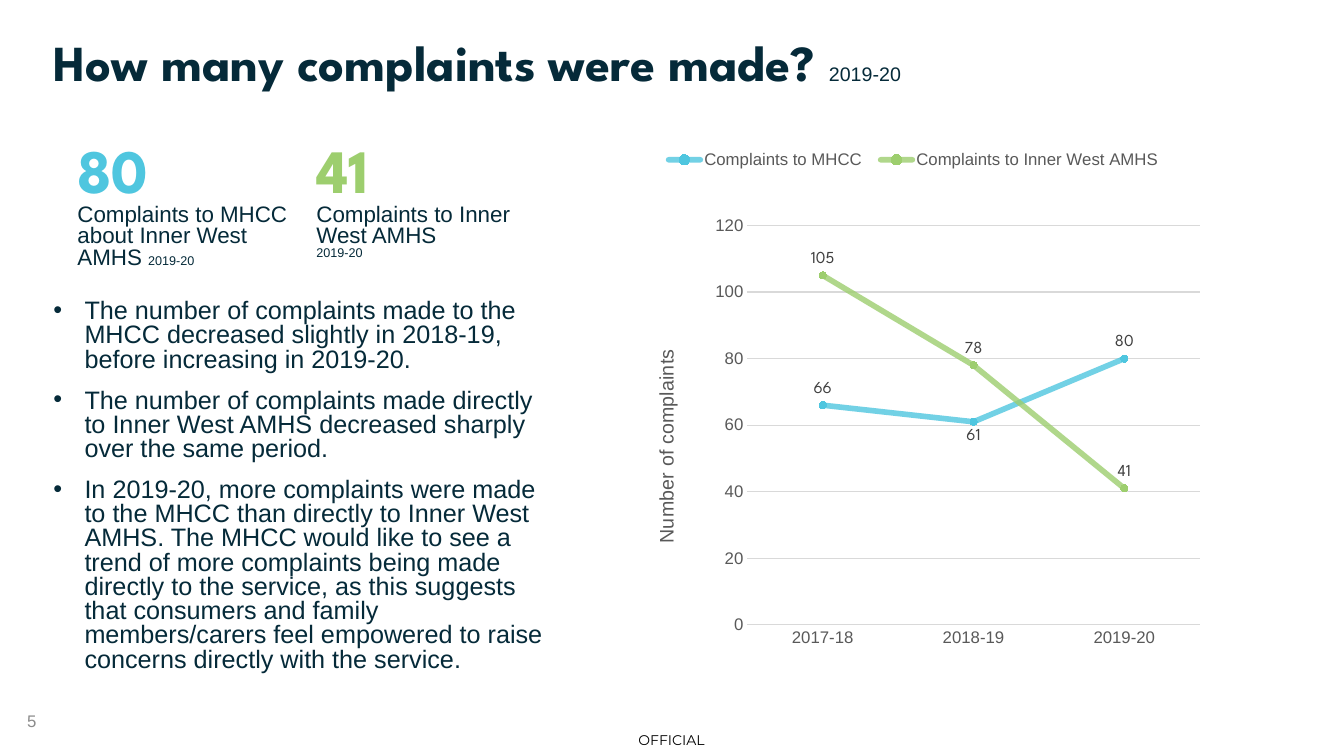
import pptx
import pptx.util
import pptx.dml.color
import pptx.chart.data
import pptx.enum.chart
import pptx.enum.text
import pptx.oxml
import pptx.oxml.ns
import lxml.etree

Inches = pptx.util.Inches
Pt = pptx.util.Pt
Align = pptx.enum.text.PP_ALIGN
Anchor = pptx.enum.text.MSO_ANCHOR
qn = pptx.oxml.ns.qn

NAVY, BLUE, GREEN = "052A39", "4FC6DF", "9DCE6E"
GREY, RULE = "595959", "D9D9D9"
HEAD, BODY = "League Spartan", "Arial"


def color(text):
    return pptx.dml.color.RGBColor.from_string(text)


def style(font, size=12, face=BODY, ink=NAVY, bold=False):
    font.size = Pt(size)
    font.name = face
    font.bold = bold
    font.color.rgb = color(ink)


def write(para, text, **form):
    for i, part in enumerate(text.split("\n")):
        if i:
            para.add_line_break()
        if part:
            run = para.add_run()
            run.text = part
            style(run.font, **form)


def place(part, mode=None, **spots):
    layout = part.find(qn("c:layout"))
    if layout is None:
        layout = lxml.etree.Element(qn("c:layout"))
        over = part.find(qn("c:overlay"))
        part.insert(0 if over is None else part.index(over), layout)
    for old in list(layout):
        layout.remove(old)
    manual = lxml.etree.SubElement(layout, qn("c:manualLayout"))
    if mode:
        lxml.etree.SubElement(manual, qn("c:layoutTarget")).set("val", mode)
    for key in ("x", "y"):
        lxml.etree.SubElement(manual, qn(f"c:{key}Mode")).set("val", "edge")
    for key, val in spots.items():
        lxml.etree.SubElement(manual, qn(f"c:{key}")).set("val", str(val))


class Deck:
    def __init__(self):
        self.prs = pptx.Presentation()
        self.prs.slide_width = Inches(13.33)
        self.prs.slide_height = Inches(7.5)
        self.slide = self.prs.slides.add_slide(self.prs.slide_layouts[5])

    def title(self, text, year):
        shape = self.slide.shapes.title
        shape.left, shape.top = Inches(0.43), Inches(0.33)
        shape.width, shape.height = Inches(12.42), Inches(0.93)
        frame = shape.text_frame
        frame.vertical_anchor = Anchor.TOP
        frame.auto_size = pptx.enum.text.MSO_AUTO_SIZE.NONE
        para = frame.paragraphs[0]
        para.alignment = Align.LEFT
        para.line_spacing = 0.9
        write(para, text, size=36, face=HEAD, bold=True)
        write(para, year, size=14)

    def box(self, left, top, width, height, anchor=Anchor.TOP):
        shape = self.slide.shapes.add_textbox(
            Inches(left), Inches(top), Inches(width), Inches(height))
        frame = shape.text_frame
        frame.word_wrap = True
        frame.vertical_anchor = anchor
        return frame

    def figure(self, left, value, label, ink):
        frame = self.box(left, 1.4, 2.37, 1.24)
        big, small = frame.paragraphs[0], frame.add_paragraph()
        big.line_spacing = small.line_spacing = 0.8
        write(big, value, size=44, face=HEAD, ink=ink, bold=True)
        write(small, label, size=16)
        write(small, "2019-20", size=9)

    def bullets(self, items):
        frame = self.box(0.43, 2.93, 5.22, 4.01)
        for i, item in enumerate(items):
            para = frame.add_paragraph() if i else frame.paragraphs[0]
            props = para._p.get_or_add_pPr()
            props.set("marL", str(Inches(0.31)))
            props.set("indent", str(-Inches(0.31)))
            lxml.etree.SubElement(props, qn("a:buFont")).set("typeface", BODY)
            lxml.etree.SubElement(props, qn("a:buChar")).set("char", "•")
            para.line_spacing = 0.8
            para.space_before = Pt(6 if i else 0)
            para.space_after = Pt(6)
            write(para, item, size=18)

    def footer(self, number, mark):
        frame = self.box(0.17, 6.95, 3, 0.4, Anchor.MIDDLE)
        write(frame.paragraphs[0], number, ink="8C8C8C")
        frame = self.box(6.15, 7.19, 1.02, 0.31, Anchor.MIDDLE)
        frame.margin_left = frame.margin_right = 0
        frame.margin_top = frame.margin_bottom = 0
        frame.paragraphs[0].alignment = Align.CENTER
        write(frame.paragraphs[0], mark, size=10, face="Montserrat",
              ink="000000")

    def chart(self, years, rows):
        data = pptx.chart.data.CategoryChartData()
        data.categories = years
        for name, vals, ink in rows:
            data.add_series(name, vals)
        chart = self.slide.shapes.add_chart(
            pptx.enum.chart.XL_CHART_TYPE.LINE_MARKERS, Inches(6.39),
            Inches(1.26), Inches(5.68), Inches(5.43), data).chart
        style(chart.font, size=10, ink="000000")
        chart.has_title = False
        chart.plots[0].vary_by_categories = False
        self.legend(chart)
        self.axes(chart)
        for line, row in zip(chart.plots[0].series, rows):
            self.series(line, row[2])
        low = chart.plots[0].series[0].points[1].data_label
        style(low.font, face=HEAD, ink="404040")
        low.position = pptx.enum.chart.XL_LABEL_POSITION.BELOW
        area = chart._chartSpace.chart.plotArea
        place(area, "inner", x=0.18, y=0.18, w=0.79, h=0.73)

    def legend(self, chart):
        chart.has_legend = True
        key = chart.legend
        key.position = pptx.enum.chart.XL_LEGEND_POSITION.BOTTOM
        key.include_in_layout = False
        style(key.font, ink=GREY)
        place(key._element, x=0.02, y=0.03, w=0.9, h=0.06)

    def axes(self, chart):
        cat, val = chart.category_axis, chart.value_axis
        for axis in (cat, val):
            axis.major_tick_mark = pptx.enum.chart.XL_TICK_MARK.NONE
            axis.minor_tick_mark = pptx.enum.chart.XL_TICK_MARK.NONE
            style(axis.tick_labels.font, ink=GREY)
        val.minimum_scale, val.maximum_scale, val.major_unit = 0, 120, 20
        val.format.line.fill.background()
        for line in (cat.format.line, val.major_gridlines.format.line):
            line.color.rgb = color(RULE)
            line.width = Pt(0.75)
        name = val.axis_title
        write(name.text_frame.paragraphs[0], "Number of complaints",
              size=14, ink=GREY)
        body = name.text_frame._txBody.find(qn("a:bodyPr"))
        body.set("rot", "-5400000")
        body.set("vert", "horz")
        place(name._element, x=0.01, y=0.4)

    def series(self, line, ink):
        line.smooth = False
        line.format.line.width = Pt(4)
        line.format.line.color.rgb = color(ink)
        stroke = line._element.find(qn("c:spPr")).find(qn("a:ln"))
        stroke.set("cap", "rnd")
        tone = stroke.find(".//" + qn("a:srgbClr"))
        lxml.etree.SubElement(tone, qn("a:alpha")).set("val", "80000")
        dot = line.marker
        dot.style = pptx.enum.chart.XL_MARKER_STYLE.CIRCLE
        dot.size = 5
        dot.format.fill.solid()
        dot.format.fill.fore_color.rgb = color(ink)
        dot.format.line.color.rgb = color(ink)
        tags = line.data_labels
        tags.show_value = True
        tags.position = pptx.enum.chart.XL_LABEL_POSITION.ABOVE
        style(tags.font, face=HEAD, ink="404040")


def main():
    deck = Deck()
    deck.title("How many complaints were made? ", "2019-20")
    deck.figure(0.67, "80", "Complaints to MHCC about Inner West AMHS ", BLUE)
    deck.figure(3.04, "41", "Complaints to Inner West AMHS \n", GREEN)
    deck.bullets([
        "The number of complaints made to the MHCC decreased slightly in "
        "2018-19, before increasing in 2019-20.",
        "The number of complaints made directly to Inner West AMHS decreased "
        "sharply over the same period.",
        "In 2019-20, more complaints were made to the MHCC than directly to "
        "Inner West AMHS. The MHCC would like to see a trend of more "
        "complaints being made directly to the service, as this suggests "
        "that consumers and family members/carers feel empowered to raise "
        "concerns directly with the service."])
    deck.chart(["2017-18", "2018-19", "2019-20"], [
        ("Complaints to MHCC", (66, 61, 80), BLUE),
        ("Complaints to Inner West AMHS", (105, 78, 41), GREEN)])
    deck.footer("5", "OFFICIAL")
    deck.prs.save("out.pptx")


if __name__ == "__main__":
    main()
